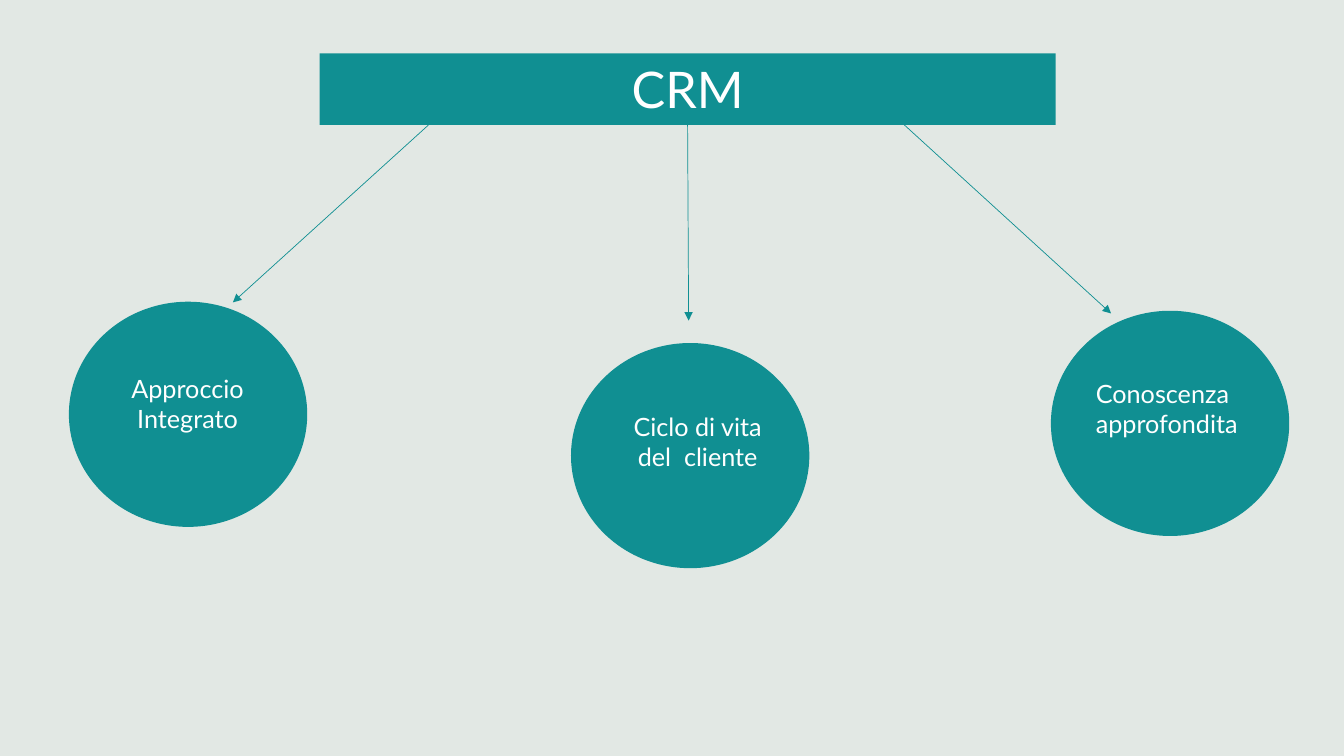
from lxml import etree
from pptx import Presentation
from pptx.dml.color import RGBColor
from pptx.enum.shapes import MSO_CONNECTOR, MSO_SHAPE as SHAPE
from pptx.enum.text import MSO_ANCHOR, PP_ALIGN as ALIGN
from pptx.oxml.ns import qn
from pptx.util import Inches, Pt

TEAL, WHITE, BACKGROUND = "108F92", "FFFFFF", "E2E8E4"
FONT = "Lato"
CIRCLE_WIDTH, CIRCLE_HEIGHT = 2.35, 2.22
LABEL_DROP, LABEL_HEIGHT = 0.65, 0.71

# circle left and top, label text, label inset, label width, alignment
PILLARS = [
    (0.69, 3.0, "Approccio Integrato", 0.36, 1.62, ALIGN.CENTER),
    (5.67, 3.41, "Ciclo di vita del  cliente", 0.47, 1.56, ALIGN.CENTER),
    (10.43, 3.09, "Conoscenza approfondita", 0.34, 1.71, ALIGN.LEFT),
]
# arrow start x, end x, end y
ARROWS = [(4.25, 2.31, 3.0), (6.82, 6.83, 3.18), (8.97, 11.02, 3.11)]


def rgb(value):
    return RGBColor.from_string(value)


def write(shape, text, size, align):
    frame = shape.text_frame
    frame.word_wrap = True
    frame.text = text
    paragraph = frame.paragraphs[0]
    paragraph.alignment = align
    paragraph.font.size = Pt(size)
    paragraph.font.name = FONT
    paragraph.font.color.rgb = rgb(WHITE)


def add_teal_shape(slide, kind, left, top, width, height):
    shape = slide.shapes.add_shape(
        kind, Inches(left), Inches(top), Inches(width), Inches(height))
    shape.shadow.inherit = False
    shape.fill.solid()
    shape.fill.fore_color.rgb = rgb(TEAL)
    return shape


def add_banner(slide, left, top, width, height):
    banner = add_teal_shape(slide, SHAPE.RECTANGLE, left, top, width, height)
    banner.line.fill.background()
    banner.text_frame.vertical_anchor = MSO_ANCHOR.TOP
    write(banner, "CRM", 36, ALIGN.CENTER)


def add_arrow(slide, start_x, start_y, end_x, end_y):
    arrow = slide.shapes.add_connector(
        MSO_CONNECTOR.STRAIGHT, Inches(start_x), Inches(start_y),
        Inches(end_x), Inches(end_y))
    arrow.line.color.rgb = rgb(TEAL)
    arrow.line.width = Pt(0.5)
    etree.SubElement(arrow.line._get_or_add_ln(), qn("a:tailEnd"), type="triangle")
    etree.SubElement(arrow._element.spPr, qn("a:effectLst"))


def add_pillar(slide, left, top, text, inset, label_width, align):
    """Draw a circle with its label; the label sits on one line of the grid."""
    circle = add_teal_shape(
        slide, SHAPE.OVAL, left, top, CIRCLE_WIDTH, CIRCLE_HEIGHT)
    circle.line.color.rgb = rgb(TEAL)
    circle.line.width = Pt(1)
    # The circles differ slightly in height; the outer labels share one top.
    label_top = min(top + LABEL_DROP, 3.7) if top < 3.2 else top + 0.62
    label = slide.shapes.add_textbox(
        Inches(left + inset), Inches(label_top),
        Inches(label_width), Inches(LABEL_HEIGHT))
    write(label, text, 18, align)


def build_crm_slide(slide):
    slide.background.fill.solid()
    slide.background.fill.fore_color.rgb = rgb(BACKGROUND)
    banner_top, banner_height = 0.53, 0.71
    add_banner(slide, 3.17, banner_top, 7.3, banner_height)
    for start_x, end_x, end_y in ARROWS:
        add_arrow(slide, start_x, banner_top + banner_height, end_x, end_y)
    for pillar in PILLARS:
        add_pillar(slide, *pillar)


def main():
    deck = Presentation()
    deck.slide_width, deck.slide_height = Inches(13.33), Inches(7.5)
    build_crm_slide(deck.slides.add_slide(deck.slide_layouts[6]))
    deck.save("out.pptx")


if __name__ == "__main__":
    main()
